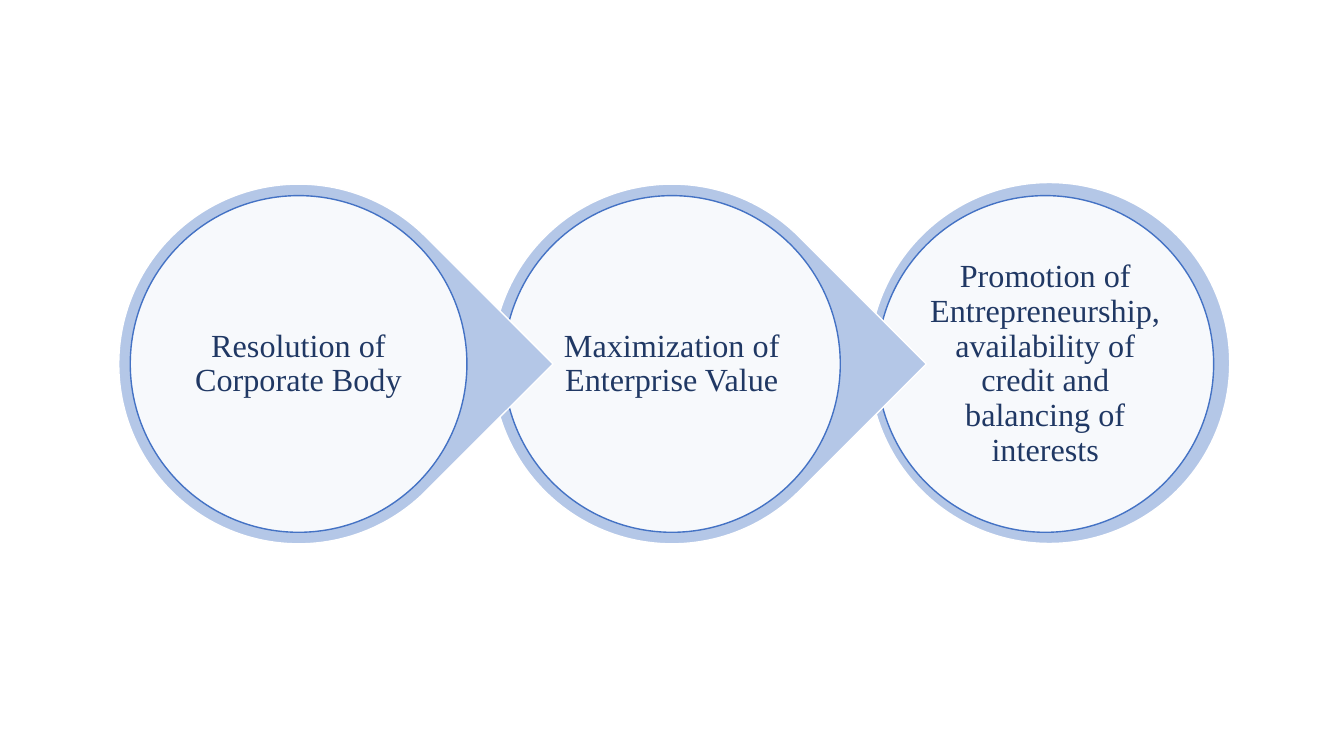
from lxml import etree
from pptx import Presentation
from pptx.dml.color import RGBColor
from pptx.enum.shapes import MSO_SHAPE
from pptx.enum.text import MSO_ANCHOR, PP_ALIGN
from pptx.oxml.ns import qn
from pptx.util import Pt

GOALS = [
    "Resolution of Corporate Body",
    "Maximization of Enterprise Value",
    "Promotion of Entrepreneurship, availability of credit and balancing of interests",
]
COLORS = {"ring": "B4C7E7", "edge": "4472C4", "white": "FFFFFF", "text": "203864"}
OVAL, DROP = MSO_SHAPE.OVAL, MSO_SHAPE.TEAR
MIDDLE, CENTER = MSO_ANCHOR.MIDDLE, PP_ALIGN.CENTER

WIDE, HIGH = 960, 540
MID_X, MID_Y = 480, 260
PITCH = 266.7
RING, DISC = 257, 240.5
END_SHIFT = 2.8  # the last ring sits slightly right of its disc

FRAME = {
    "word_wrap": True, "vertical_anchor": MIDDLE,
    "margin_left": 0, "margin_right": 0, "margin_top": 0, "margin_bottom": 0,
}
PARA = {"alignment": CENTER, "line_spacing": 0.9}
FONT = {"name": "Times New Roman", "size": Pt(23)}


def rgb(name):
    return RGBColor.from_string(COLORS[name])


def apply(target, values):
    for name, value in values.items():
        setattr(target, name, value)


def add_round(slide, kind, x, y, size, fill, line):
    """Add a round shape centred on x, y."""
    shape = slide.shapes.add_shape(
        kind, Pt(x - size / 2), Pt(y - size / 2), Pt(size), Pt(size))
    shape.shadow.inherit = False
    shape.fill.solid()
    shape.fill.fore_color.rgb = rgb(fill)
    shape.line.color.rgb = rgb(line)
    shape.line.width = Pt(1)
    return shape


def set_alpha(shape, percent):
    color = shape.fill._xPr.find(qn("a:solidFill"))[0]
    etree.SubElement(color, qn("a:alpha"), val=str(percent * 1000))


def write(shape, text):
    apply(shape.text_frame, FRAME)
    para = shape.text_frame.paragraphs[0]
    apply(para, PARA)
    run = para.add_run()
    run.text = text
    apply(run.font, FONT)
    run.font.color.rgb = rgb("text")


def main():
    deck = Presentation()
    deck.slide_width, deck.slide_height = Pt(WIDE), Pt(HIGH)
    slide = deck.slides.add_slide(deck.slide_layouts[6])
    last = len(GOALS) - 1

    # Right to left, so that each point overlaps the next circle
    for i in range(last, -1, -1):
        x = MID_X + (i - last / 2) * PITCH
        if i == last:
            add_round(slide, OVAL, x + END_SHIFT, MID_Y - 0.7, RING + 0.8, "ring", "white")
        else:
            drop = add_round(slide, DROP, x, MID_Y, RING, "ring", "white")
            drop.rotation = 45
        disc = add_round(slide, OVAL, x, MID_Y, DISC, "white", "edge")
        set_alpha(disc, 90)
        write(disc, GOALS[i])

    deck.save("out.pptx")


if __name__ == "__main__":
    main()
